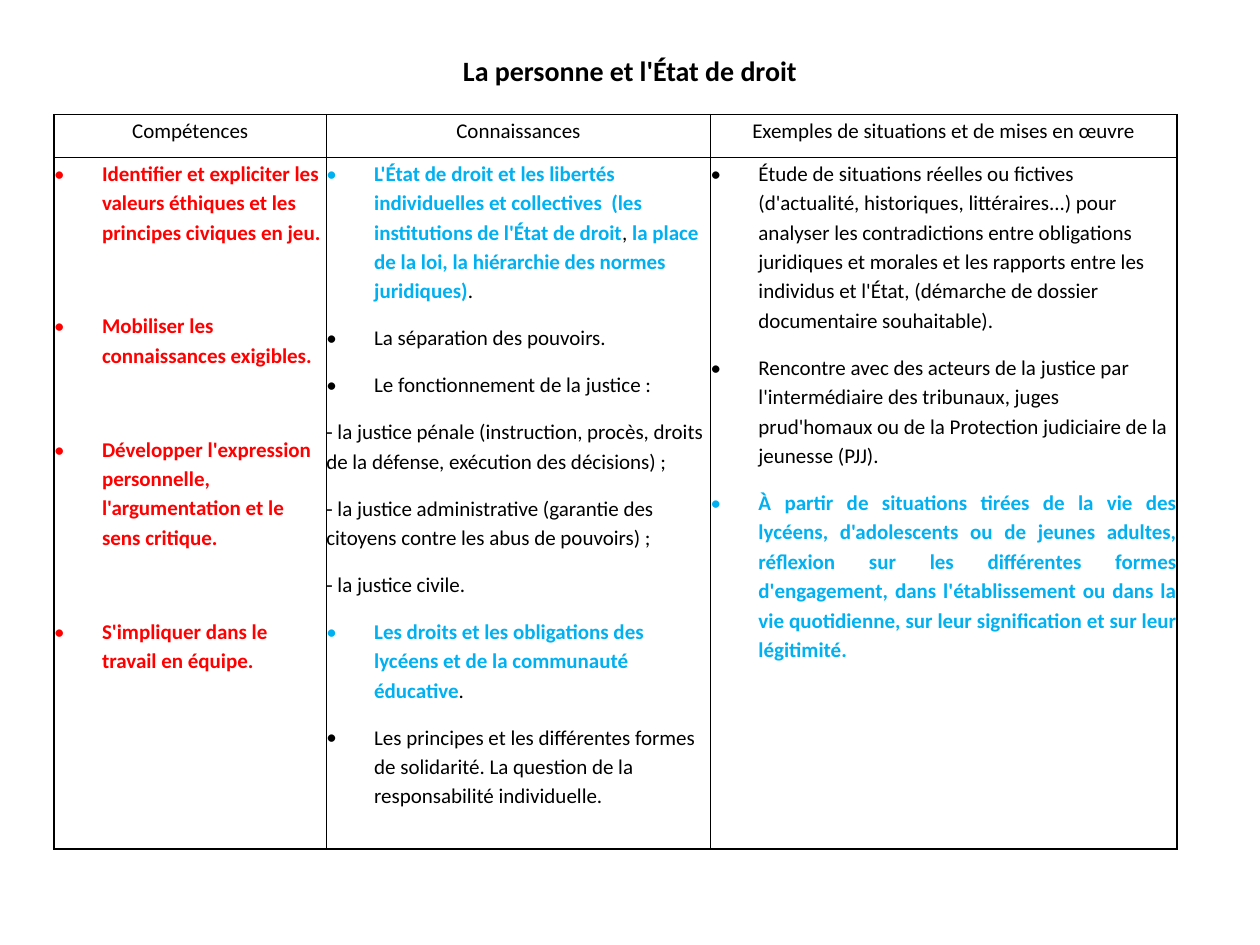
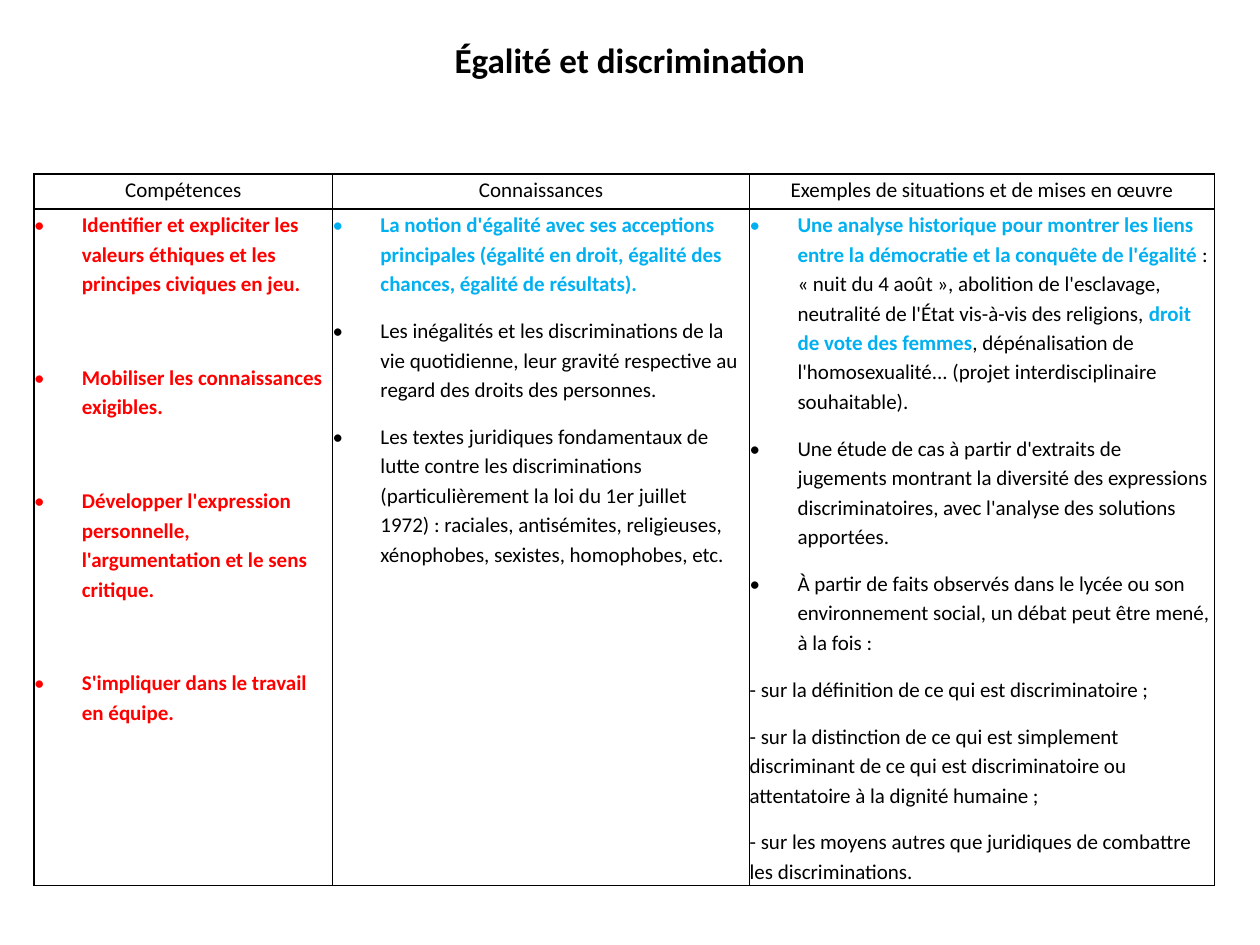
from lxml import etree
from pptx import Presentation
from pptx.dml.color import RGBColor
from pptx.enum.text import MSO_ANCHOR, PP_ALIGN
from pptx.oxml.ns import qn
from pptx.util import Inches, Pt

LEFT, CENTER, JUSTIFY = PP_ALIGN.LEFT, PP_ALIGN.CENTER, PP_ALIGN.JUSTIFY
MIDDLE = MSO_ANCHOR.MIDDLE
COLORS = {"ink": "000000", "skill": "FF0000", "key": "00B0F0"}
FONT = "Calibri"
INDENT = Inches(0.38)

HEADS = ["Compétences", "Connaissances", "Exemples de situations et de mises en œuvre"]
SKILLS = [
    "Identifier et expliciter les valeurs éthiques et les principes civiques en jeu.",
    "Mobiliser les connaissances exigibles.",
    "Développer l'expression personnelle, l'argumentation et le sens critique.",
    "S'impliquer dans le travail en équipe.",
]

# Text between asterisks is a key point; a leading dash marks a line without bullet.
LAW_FACTS = [
    "*L'État de droit et les libertés individuelles et collectives  (les institutions "
    "de l'État de droit*, *la place de la loi, la hiérarchie des normes juridiques)*.",
    "La séparation des pouvoirs.",
    "Le fonctionnement de la justice :",
    "- la justice pénale (instruction, procès, droits de la défense, "
    "exécution des décisions) ;",
    "- la justice administrative (garantie des citoyens contre les abus de pouvoirs) ;",
    "- la justice civile.",
    "*Les droits et les obligations des lycéens et de la communauté éducative*.",
    "Les principes et les différentes formes de solidarité. "
    "La question de la responsabilité individuelle.",
]
LAW_CASES = [
    "Étude de situations réelles ou fictives (d'actualité, historiques, littéraires...) "
    "pour analyser les contradictions entre obligations juridiques et morales et les "
    "rapports entre les individus et l'État, (démarche de dossier documentaire "
    "souhaitable).",
    "Rencontre avec des acteurs de la justice par l'intermédiaire des tribunaux, juges "
    "prud'homaux ou de la Protection judiciaire de la jeunesse (PJJ).",
    "*À partir de situations tirées de la vie des lycéens, d'adolescents ou de jeunes "
    "adultes, réflexion sur les différentes formes d'engagement, dans l'établissement ou "
    "dans la vie quotidienne, sur leur signification et sur leur légitimité.*",
]
EQUAL_FACTS = [
    "*La notion d'égalité avec ses acceptions principales (égalité en droit, égalité "
    "des chances, égalité de résultats).*",
    "Les inégalités et les discriminations de la vie quotidienne, leur gravité "
    "respective au regard des droits des personnes.",
    "Les textes juridiques fondamentaux de lutte contre les discriminations "
    "(particulièrement la loi du 1er juillet 1972) : raciales, antisémites, "
    "religieuses, xénophobes, sexistes, homophobes, etc.",
]
EQUAL_CASES = [
    "*Une analyse historique pour montrer les liens entre la démocratie et la conquête "
    "de l'égalité *: « nuit du 4 août », abolition de l'esclavage, neutralité de l'État "
    "vis-à-vis des religions, *droit de vote des femmes*, dépénalisation de "
    "l'homosexualité... (projet interdisciplinaire souhaitable).",
    "Une étude de cas à partir d'extraits de jugements montrant la diversité des "
    "expressions discriminatoires, avec l'analyse des solutions apportées.",
    "À partir de faits observés dans le lycée ou son environnement social, un débat "
    "peut être mené, à la fois :",
    "- sur la définition de ce qui est discriminatoire ;",
    "- sur la distinction de ce qui est simplement discriminant de ce qui est "
    "discriminatoire ou attentatoire à la dignité humaine ;",
    "- sur les moyens autres que juridiques de combattre les discriminations.",
]


def write(frame, items, size=12, color="ink", bold=False, align=LEFT,
          lines=1.15, after=10, bullet=False):
    """Fill a text frame, one paragraph per item, key points in bold colour."""
    for n, item in enumerate(items):
        para = frame.add_paragraph() if n else frame.paragraphs[0]
        para.alignment = align
        para.line_spacing = lines
        para.space_after = Pt(after)
        for k, part in enumerate(item.split("*")):
            if not part:
                continue
            run = para.add_run()
            run.text = part
            font = run.font
            font.name, font.size = FONT, Pt(size)
            font.bold = bold or k % 2 == 1
            font.color.rgb = RGBColor.from_string(COLORS["key" if k % 2 else color])
        if bullet and not item.startswith("-"):
            props = para._p.get_or_add_pPr()
            props.set("marL", str(INDENT))
            props.set("indent", str(-INDENT))
            etree.SubElement(props, qn("a:buFont"), typeface=FONT)
            etree.SubElement(props, qn("a:buChar"), char="•")


def frame_cell(cell):
    """Clear the fill and margins and draw a thin line on all four sides."""
    cell.fill.background()
    cell.margin_left = cell.margin_right = cell.margin_top = cell.margin_bottom = 0
    props = cell._tc.get_or_add_tcPr()
    for n, side in enumerate("LRTB"):
        line = etree.Element(qn(f"a:ln{side}"), w=str(Pt(1)))
        fill = etree.SubElement(line, qn("a:solidFill"))
        etree.SubElement(fill, qn("a:srgbClr"), val=COLORS["ink"])
        props.insert(n, line)


class Deck:
    def __init__(self):
        self.file = Presentation()
        self.file.slide_width, self.file.slide_height = Inches(10), Inches(7.5)
        self.slide = None

    def page(self):
        self.slide = self.file.slides.add_slide(self.file.slide_layouts[6])

    def title(self, text, top, size):
        box = self.slide.shapes.add_textbox(0, Inches(top), Inches(10), Inches(0.37))
        frame = box.text_frame
        frame.word_wrap = True
        frame.vertical_anchor = MIDDLE
        write(frame, [text], size=size, bold=True, align=CENTER, lines=1.0, after=0)

    def table(self, left, top, widths, heights, facts, cases):
        shape = self.slide.shapes.add_table(
            2, 3, Inches(left), Inches(top), Inches(sum(widths)), Inches(sum(heights)))
        grid = shape.table
        grid.first_row = grid.horz_banding = False
        for col, width in zip(grid.columns, widths):
            col.width = Inches(width)
        for row, height in zip(grid.rows, heights):
            row.height = Inches(height)
        for cell in grid.iter_cells():
            frame_cell(cell)
        for n, head in enumerate(HEADS):
            write(grid.cell(0, n).text_frame, [head], align=CENTER)
        write(grid.cell(1, 0).text_frame, SKILLS, color="skill", bold=True,
              after=36.8, bullet=True)
        for n, items in enumerate([facts, cases], 1):
            write(grid.cell(1, n).text_frame, items, bullet=True)
        return grid


def main():
    deck = Deck()

    deck.page()
    grid = deck.table(0.43, 0.91, [2.16, 3.05, 3.7], [0.34, 5.49], LAW_FACTS, LAW_CASES)
    grid.cell(1, 2).text_frame.paragraphs[-1].alignment = JUSTIFY
    deck.title("La personne et l'État de droit", top=0.37, size=16)

    deck.page()
    deck.title("Égalité et discrimination", top=0.29, size=20)
    deck.table(0.27, 1.38, [2.37, 3.31, 3.69], [0.28, 5.37], EQUAL_FACTS, EQUAL_CASES)

    deck.file.save("out.pptx")


if __name__ == "__main__":
    main()
